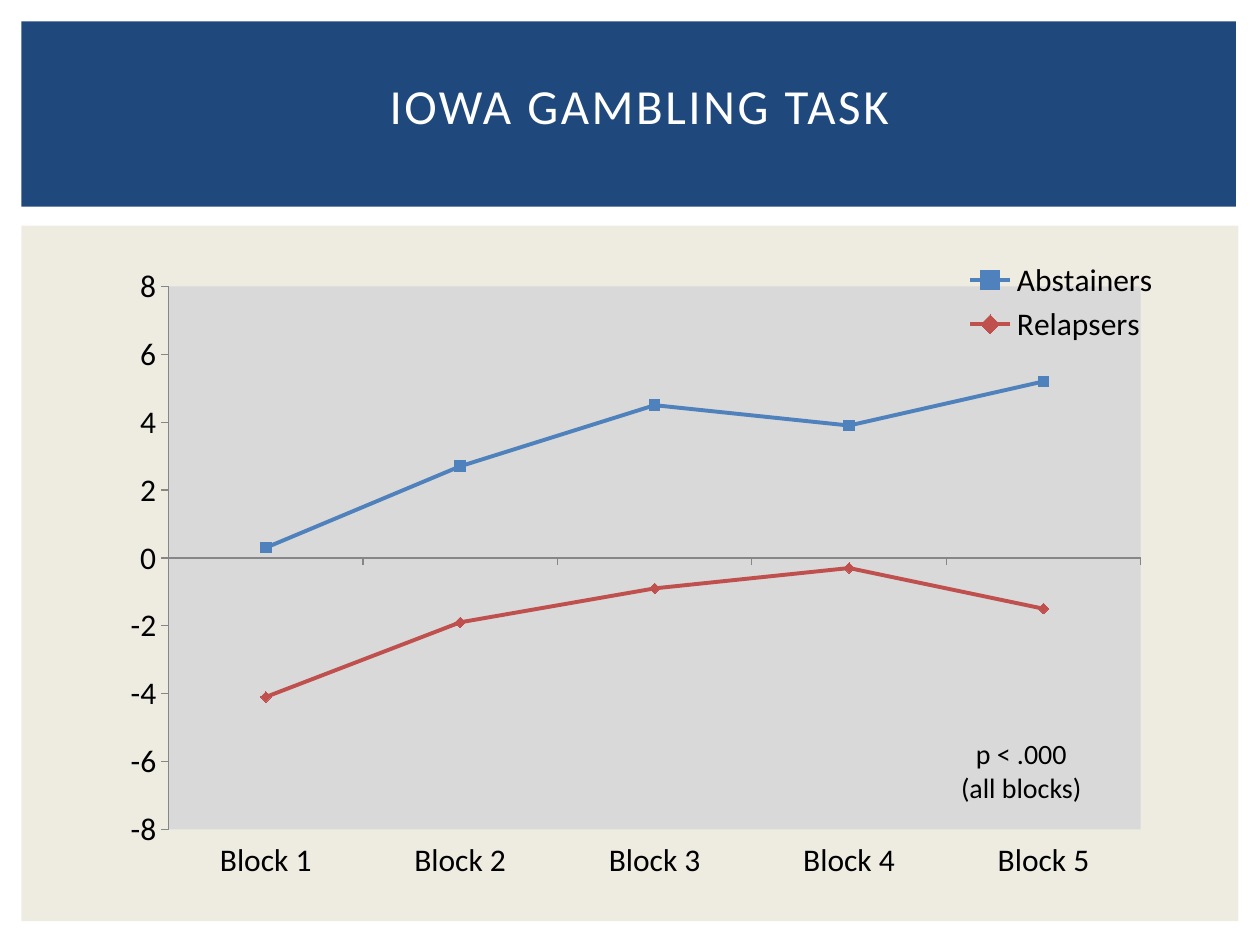
from dataclasses import dataclass

from lxml import etree
from pptx import Presentation
from pptx.chart.data import CategoryChartData
from pptx.dml.color import RGBColor
from pptx.enum.chart import (XL_CHART_TYPE, XL_LEGEND_POSITION, XL_MARKER_STYLE,
                             XL_TICK_LABEL_POSITION, XL_TICK_MARK)
from pptx.enum.shapes import MSO_SHAPE
from pptx.enum.text import PP_ALIGN
from pptx.oxml import parse_xml
from pptx.oxml.ns import nsdecls, qn
from pptx.util import Inches, Pt

RECT = MSO_SHAPE.RECTANGLE
CENTER = PP_ALIGN.CENTER
LINE_MARKERS = XL_CHART_TYPE.LINE_MARKERS
CORNER = XL_LEGEND_POSITION.CORNER
LOW = XL_TICK_LABEL_POSITION.LOW
OUTSIDE = XL_TICK_MARK.OUTSIDE
SQUARE = XL_MARKER_STYLE.SQUARE
DIAMOND = XL_MARKER_STYLE.DIAMOND


@dataclass(frozen=True)
class Theme:
    font: str = "Calibri"
    panel: str = "EEECE1"
    banner: str = "1F497D"
    title: str = "FFFFFF"
    text: str = "000000"
    plot: str = "D9D9D9"
    axis: str = "868686"
    title_size: float = 28
    chart_size: float = 18
    note_size: float = 16
    line_width: float = 2.25
    marker_size: int = 6


THEME = Theme()
BLOCKS = [f"Block {n}" for n in range(1, 6)]
SERIES = [
    ("Abstainers", (0.3, 2.7, 4.5, 3.9, 5.2), "4F81BD", SQUARE),
    ("Relapsers", (-4.1, -1.9, -0.9, -0.3, -1.5), "C0504D", DIAMOND),
]


def set_fill(fill, color):
    fill.solid()
    fill.fore_color.rgb = RGBColor.from_string(color)


def set_font(font, size, color):
    font.name = THEME.font
    font.size = Pt(size)
    font.color.rgb = RGBColor.from_string(color)


def add_panel(slide, x, y, w, h, color):
    sp = slide.shapes.add_shape(RECT, Inches(x), Inches(y), Inches(w), Inches(h))
    sp.shadow.inherit = False
    set_fill(sp.fill, color)
    sp.line.fill.background()


def add_text(slide, x, y, w, h, text, size, color):
    sp = slide.shapes.add_textbox(Inches(x), Inches(y), Inches(w), Inches(h))
    tf = sp.text_frame
    tf.word_wrap = True
    tf.text = text
    for p in tf.paragraphs:
        p.alignment = CENTER
        for r in p.runs:
            set_font(r.font, size, color)
    return tf


def add_title(slide, text):
    tf = add_text(slide, 0.59, 0.55, 8.92, 1.08, text, THEME.title_size, THEME.title)
    p = tf.paragraphs[0]
    p._p.get_or_add_pPr().set("marL", str(Inches(0.05)))
    p.runs[0]._r.get_or_add_rPr().set("spc", "150")


def make_layout(x, y, w, h, inner=False):
    layout = parse_xml(f"<c:layout {nsdecls('c')}><c:manualLayout/></c:layout>")
    values = [("xMode", "edge"), ("yMode", "edge"), ("x", x), ("y", y), ("w", w), ("h", h)]
    if inner:
        values.insert(0, ("layoutTarget", "inner"))
    for tag, value in values:
        etree.SubElement(layout[0], qn(f"c:{tag}")).set("val", str(value))
    return layout


def style_plot_area(chart):
    area = chart._chartSpace.chart.plotArea
    for old in area.findall(qn("c:layout")):
        area.remove(old)
    area.insert(0, make_layout(0.056, 0.05, 0.923, 0.85, inner=True))
    area.append(parse_xml(
        f"<c:spPr {nsdecls('c', 'a')}><a:solidFill>"
        f'<a:srgbClr val="{THEME.plot}"/></a:solidFill></c:spPr>'))


def style_axes(chart):
    for axis in (chart.category_axis, chart.value_axis):
        axis.has_major_gridlines = False
        axis.major_tick_mark = OUTSIDE
        axis.format.line.color.rgb = RGBColor.from_string(THEME.axis)
    chart.category_axis.tick_label_position = LOW
    chart.value_axis.minimum_scale = -8
    chart.value_axis.maximum_scale = 8
    chart.value_axis.major_unit = 2


def style_legend(chart):
    chart.has_legend = True
    legend = chart.legend
    legend.position = CORNER
    legend.include_in_layout = True
    legend._element.find(qn("c:legendPos")).addnext(make_layout(0.08, 0.06, 0.2, 0.14))


def style_series(series, color, marker):
    series.smooth = False
    series.format.line.width = Pt(THEME.line_width)
    series.format.line.color.rgb = RGBColor.from_string(color)
    series.marker.style = marker
    series.marker.size = THEME.marker_size
    set_fill(series.marker.format.fill, color)
    series.marker.format.line.fill.background()


def add_line_chart(slide, x, y, w, h):
    data = CategoryChartData()
    data.categories = BLOCKS
    for name, values, _, _ in SERIES:
        data.add_series(name, values)
    chart = slide.shapes.add_chart(
        LINE_MARKERS, Inches(x), Inches(y), Inches(w), Inches(h), data).chart
    chart.has_title = False
    set_font(chart.font, THEME.chart_size, THEME.text)
    chart.plots[0].vary_by_categories = False
    style_axes(chart)
    style_legend(chart)
    style_plot_area(chart)
    for series, (_, _, color, marker) in zip(chart.plots[0].series, SERIES):
        style_series(series, color, marker)


def main():
    prs = Presentation()
    prs.slide_width, prs.slide_height = Inches(10), Inches(7.5)
    slide = prs.slides.add_slide(prs.slide_layouts[6])
    add_panel(slide, 0.17, 1.79, 9.66, 5.52, THEME.panel)
    add_panel(slide, 0.17, 0.17, 9.64, 1.47, THEME.banner)
    add_title(slide, "IOWA GAMBLING TASK")
    add_line_chart(slide, 0.87, 2.02, 8.36, 5.07)
    add_text(slide, 7.2, 5.8, 1.81, 0.64, "p < .000\n(all blocks)",
             THEME.note_size, THEME.text)
    prs.save("out.pptx")


if __name__ == "__main__":
    main()
